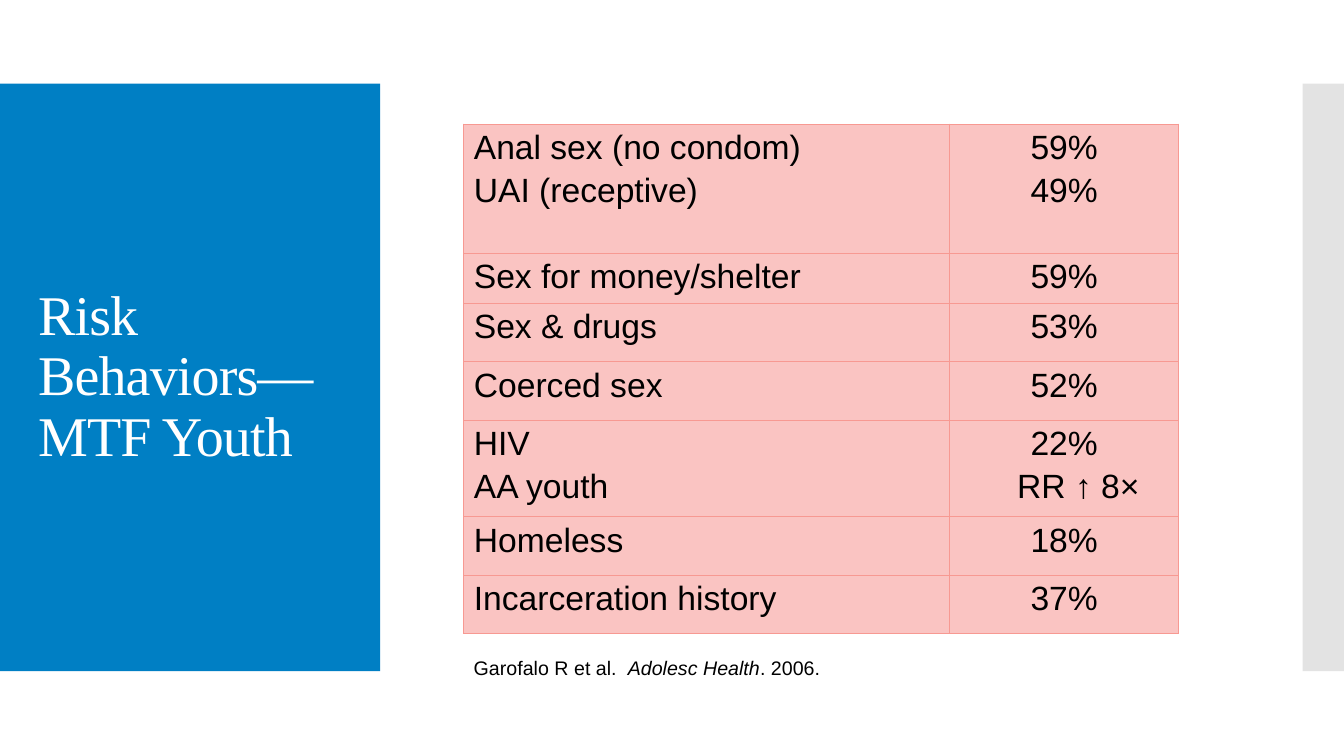
from lxml.etree import SubElement
from pptx import Presentation
from pptx.dml.color import RGBColor
from pptx.enum.shapes import MSO_SHAPE
from pptx.enum.text import MSO_ANCHOR, PP_ALIGN
from pptx.oxml import parse_xml
from pptx.oxml.ns import nsdecls, qn
from pptx.util import Inches, Pt

BLUE = RGBColor(0x00, 0x7F, 0xC4)
GRAY = RGBColor(0xC8, 0xC8, 0xC8)
PINK = RGBColor(0xFA, 0xC4, 0xC2)
ROSE = RGBColor(0xF7, 0x99, 0x92)
BLACK = RGBColor(0x00, 0x00, 0x00)
WHITE = RGBColor(0xFF, 0xFF, 0xFF)

COLUMN_WIDTHS = (4.82, 2.27)
# Row height, behaviors, rates
RISK_ROWS = [
    (1.28, ("Anal sex (no condom)", "UAI (receptive)"), ("59%", "49%")),
    (0.47, ("Sex for money/shelter",), ("59%",)),
    (0.58, ("Sex & drugs",), ("53%",)),
    (0.58, ("Coerced sex",), ("52%",)),
    (0.91, ("HIV", "AA youth"), ("22%", "RR ↑ 8×")),
    (0.58, ("Homeless",), ("18%",)),
    (0.58, ("Incarceration history",), ("37%",)),
]


class RiskSlide:
    title_font = "Times New Roman"
    body_font = "Arial"

    def __init__(self, prs):
        self.s = prs.slides.add_slide(prs.slide_layouts[6])

    def style(self, p, size, color, font=body_font):
        p.font.name = font
        p.font.size = Pt(size)
        p.font.color.rgb = color

    def panel(self, left, width, color, opacity=100):
        sp = self.s.shapes.add_shape(MSO_SHAPE.RECTANGLE, Inches(left), Inches(0.83),
                                     Inches(width), Inches(5.83))
        sp.shadow.inherit = False
        sp.fill.solid()
        sp.fill.fore_color.rgb = color
        sp.line.fill.background()
        if opacity < 100:
            clr = sp.fill._xPr.find(".//" + qn("a:srgbClr"))
            SubElement(clr, qn("a:alpha"), val=str(opacity * 1000))

    def text_box(self, left, top, width, height, wrap=True):
        sp = self.s.shapes.add_textbox(Inches(left), Inches(top),
                                       Inches(width), Inches(height))
        sp.text_frame.word_wrap = wrap
        return sp.text_frame

    def title(self, text):
        tf = self.text_box(0.28, 1.23, 3.22, 5.03)
        tf.vertical_anchor = MSO_ANCHOR.MIDDLE
        p = tf.paragraphs[0]
        r = p.add_run()
        r.text = text
        r.font._element.set("spc", "-60")
        p.line_spacing = 0.9
        self.style(p, 40, WHITE, self.title_font)

    def citation(self, parts):
        """Write (text, italic) parts on one line."""
        p = self.text_box(4.6, 6.46, 3.71, 0.34, wrap=False).paragraphs[0]
        for text, italic in parts:
            r = p.add_run()
            r.text = text
            r.font.italic = italic
        self.style(p, 14, BLACK)

    def borders(self, cell):
        tc_pr = cell._tc.get_or_add_tcPr()
        for i, side in enumerate(("lnL", "lnR", "lnT", "lnB")):
            tc_pr.insert(i, parse_xml(
                f'<a:{side} {nsdecls("a")} w="{Pt(0.75)}"><a:solidFill>'
                f'<a:srgbClr val="{ROSE}"/></a:solidFill></a:{side}>'))

    def cell(self, cell, lines, align):
        cell.fill.solid()
        cell.fill.fore_color.rgb = PINK
        self.borders(cell)
        tf = cell.text_frame
        for i, line in enumerate(lines):
            p = tf.add_paragraph() if i else tf.paragraphs[0]
            p.text = line
            p.alignment = align
            if i:
                p.space_before = Pt(4)
            if line.startswith("RR"):
                p._p.get_or_add_pPr().set("marL", str(Inches(0.28)))
            self.style(p, 24, BLACK)

    def table(self, rows):
        height = sum(row[0] for row in rows)
        table = self.s.shapes.add_table(len(rows), 2, Inches(4.6), Inches(1.23),
                                        Inches(sum(COLUMN_WIDTHS)), Inches(height)).table
        table.first_row = table.horz_banding = False
        for column, width in zip(table.columns, COLUMN_WIDTHS):
            column.width = Inches(width)
        for row, (row_height, behaviors, rates) in zip(table.rows, rows):
            row.height = Inches(row_height)
            self.cell(row.cells[0], behaviors, PP_ALIGN.LEFT)
            self.cell(row.cells[1], rates, PP_ALIGN.CENTER)


def main():
    prs = Presentation()
    prs.slide_width = Inches(13.33)
    prs.slide_height = Inches(7.5)
    slide = RiskSlide(prs)
    slide.panel(0, 3.77, BLUE)
    slide.panel(12.92, 0.41, GRAY, opacity=50)
    slide.title("Risk Behaviors—MTF Youth")
    slide.table(RISK_ROWS)
    slide.citation([("Garofalo R et al.  ", False), ("Adolesc Health", True),
                    (". 2006.", False)])
    prs.save("out.pptx")


if __name__ == "__main__":
    main()
